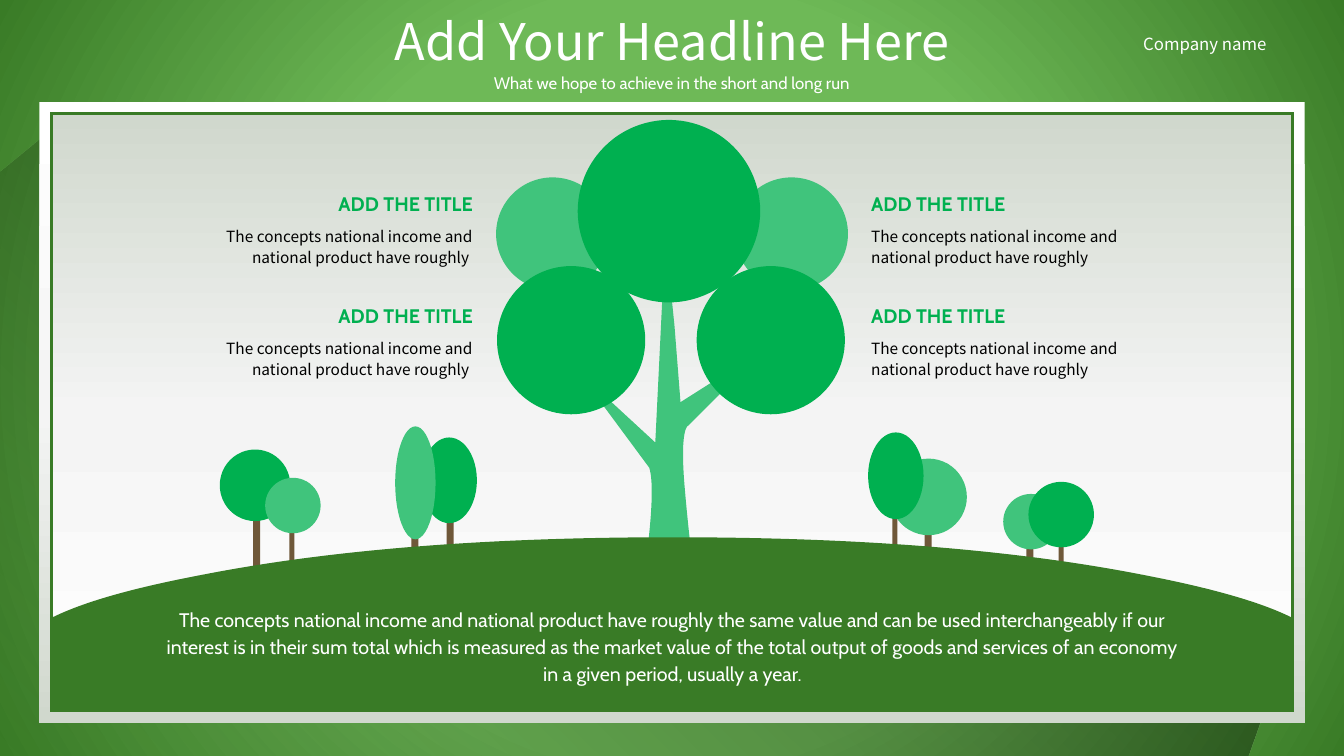
from dataclasses import dataclass

import pptx
import pptx.dml.color
import pptx.enum.shapes
import pptx.enum.text
import pptx.oxml
import pptx.oxml.ns
import pptx.util

Inches = pptx.util.Inches
SHAPE = pptx.enum.shapes.MSO_SHAPE
ALIGN = pptx.enum.text.PP_ALIGN
ANCHOR = pptx.enum.text.MSO_ANCHOR
NAMESPACE = pptx.oxml.ns.nsdecls("a")

SANS, CABIN = "Noto Sans CJK SC", "Cabin"
WHITE, BLACK, BROWN = "FFFFFF", "000000", "6F5839"
LEAF, MINT, GRASS = "00B050", "40C47C", "397B26"
PANEL_STOPS = [(0, WHITE, 100), (50, "F4F4F4", 100), (100, "D0D8CD", 100)]

Box = tuple[float, float, float, float]


@dataclass
class Tree:
    stem: Box
    crown: Box
    color: str


@dataclass
class TextStyle:
    size: float
    font: str
    color: str
    align: int = ALIGN.LEFT
    spacing: float = 1.0
    bold: bool = False


@dataclass
class Column:
    title_left: float
    detail_left: float
    align: int
    detail: str


# Drawing helpers
def rgb(color: str) -> pptx.dml.color.RGBColor:
    return pptx.dml.color.RGBColor.from_string(color)


def set_gradient(fill, owner, stops: list[tuple[int, str, int]], direction: str) -> None:
    """Stops are (position %, colour, opacity %)."""
    fill.gradient()
    gradient = owner.find(".//" + pptx.oxml.ns.qn("a:gradFill"))
    for child in list(gradient):
        gradient.remove(child)
    stop_xml = "".join(
        f'<a:gs pos="{place * 1000}"><a:srgbClr val="{color}">'
        f'<a:alpha val="{opacity * 1000}"/></a:srgbClr></a:gs>'
        for place, color, opacity in stops)
    for xml in (f"<a:gsLst {NAMESPACE}>{stop_xml}</a:gsLst>",
                direction.replace(" ", f" {NAMESPACE} ", 1)):
        gradient.append(pptx.oxml.parse_xml(xml))


def linear(degrees: int) -> str:
    return f'<a:lin ang="{degrees * 60000}" scaled="0"/>'


def finish(shape, color: str | None):
    shape.shadow.inherit = False
    shape.line.fill.background()
    if color:
        shape.fill.solid()
        shape.fill.fore_color.rgb = rgb(color)
    return shape


def add_preset(preset: int, box: Box, color: str | None = None):
    return finish(slide.shapes.add_shape(preset, *map(Inches, box)), color)


def add_panel(box: Box, degrees: int):
    panel = add_preset(SHAPE.ROUNDED_RECTANGLE, box)
    panel.adjustments[0] = 0
    set_gradient(panel.fill, panel.element, PANEL_STOPS, linear(degrees))
    return panel


def add_outline(start: tuple[float, float], segments: list[tuple], color: str | None = None):
    """A segment is an end point, or two control points and an end point."""
    builder = slide.shapes.build_freeform(*map(Inches, start))
    builder.add_line_segments([tuple(map(Inches, segment[-2:])) for segment in segments], close=True)
    shape = builder.convert_to_shape()
    lines = list(shape.element.iter(pptx.oxml.ns.qn("a:lnTo")))
    for line, segment in zip(lines, segments):
        if len(segment) == 6:
            points = "".join(
                f'<a:pt x="{Inches(x) - shape.left}" y="{Inches(y) - shape.top}"/>'
                for x, y in zip(segment[::2], segment[1::2]))
            curve = pptx.oxml.parse_xml(f"<a:cubicBezTo {NAMESPACE}>{points}</a:cubicBezTo>")
            line.getparent().replace(line, curve)
    return finish(shape, color)


def write(shape, text: str, style: TextStyle, wrap: bool, anchor: int = ANCHOR.TOP) -> None:
    frame = shape.text_frame
    frame.auto_size = pptx.enum.text.MSO_AUTO_SIZE.NONE
    frame.word_wrap = wrap
    frame.vertical_anchor = anchor
    paragraph = frame.paragraphs[0]
    paragraph.text = text
    paragraph.alignment = style.align
    paragraph.line_spacing = style.spacing
    paragraph.space_before = pptx.util.Pt(0)
    paragraph.font.size = pptx.util.Pt(style.size)
    paragraph.font.name = style.font
    paragraph.font.bold = style.bold
    paragraph.font.color.rgb = rgb(style.color)


def add_text(box: Box, text: str, style: TextStyle, wrap: bool,
             anchor: int = ANCHOR.TOP, inset: bool = False) -> None:
    shape = slide.shapes.add_textbox(*map(Inches, box))
    if not inset:
        frame = shape.text_frame
        frame.margin_left = frame.margin_right = frame.margin_top = frame.margin_bottom = 0
    write(shape, text, style, wrap, anchor)


def fill_placeholder(placeholder, box: Box, text: str, style: TextStyle) -> None:
    placeholder.left, placeholder.top, placeholder.width, placeholder.height = map(Inches, box)
    write(placeholder, text, style, wrap=False)


presentation = pptx.Presentation()
presentation.slide_width, presentation.slide_height = Inches(13.33), Inches(7.5)
slide = presentation.slides.add_slide(presentation.slide_layouts[0])

# Backdrop and framed panel
set_gradient(slide.background.fill, slide.element, [(50, "6EB957", 100), (100, GRASS, 100)],
             '<a:path path="circle"><a:fillToRect l="50000" t="50000" r="50000" b="50000"/></a:path>')
shade = add_outline((0.39, 1.38), [(12.59, 6.88), (12.37, 7.5), (0, 7.5), (0, 1.7)])
set_gradient(shade.fill, shade.element, [(0, BLACK, 50), (100, BLACK, 0)], linear(135))
add_panel((0.39, 1.01, 12.55, 6.16), 90)
inner_panel = add_panel((0.51, 1.13, 12.31, 5.92), 270)
inner_panel.line.color.rgb = rgb(GRASS)
inner_panel.line.width = pptx.util.Pt(2.25)
inner_panel.line._get_or_add_ln().append(
    pptx.oxml.parse_xml(f'<a:miter {NAMESPACE} lim="800000"/>'))

# Heading
fill_placeholder(slide.shapes.title, (3.62, 0.05, 6.09, 0.71), "Add Your Headline Here",
                 TextStyle(36, SANS, WHITE, ALIGN.CENTER))
fill_placeholder(slide.placeholders[1], (4.77, 0.65, 3.79, 0.32),
                 "What we hope to achieve in the short and long run",
                 TextStyle(12, CABIN, WHITE, ALIGN.CENTER, 1.1))
add_text((11.24, 0.29, 1.56, 0.3), "Company name", TextStyle(12, SANS, WHITE),
         wrap=False, inset=True)

# Small trees, from back to front
small_trees = [
    Tree((9.17, 4.74, 0.07, 0.69), (8.83, 4.55, 0.76, 0.76), MINT),
    Tree((8.85, 4.74, 0.05, 0.69), (8.61, 4.29, 0.55, 0.86), LEAF),
    Tree((4.43, 4.74, 0.07, 0.69), (4.18, 4.34, 0.55, 0.85), LEAF),
    Tree((4.08, 5.31, 0.07, 0.21), (3.92, 4.23, 0.4, 1.12), MINT),
    Tree((2.51, 4.98, 0.07, 0.69), (2.18, 4.46, 0.7, 0.71), LEAF),
    Tree((2.87, 5.16, 0.05, 0.47), (2.63, 4.74, 0.55, 0.55), MINT),
    Tree((10.18, 5, 0.07, 0.59), (9.95, 4.9, 0.55, 0.55), MINT),
    Tree((10.5, 5.2, 0.05, 0.47), (10.2, 4.78, 0.65, 0.65), LEAF),
]
for tree in small_trees:
    add_preset(SHAPE.RECTANGLE, tree.stem, BROWN)
    add_preset(SHAPE.OVAL, tree.crown, tree.color)

# Large tree and hill
for crown_left in (7.29, 4.92):
    add_preset(SHAPE.OVAL, (crown_left, 1.76, 1.12, 1.12), MINT)
add_outline((6.38, 5.75), [
    (6.38, 5.75, 6.52, 4.89, 6.44, 4.64), (5.73, 3.68), (6.5, 4.39), (6.6, 2.34),
    (6.69, 3.23), (6.75, 3.99), (7.6, 3.45), (6.83, 4.22),
    (6.83, 4.22, 6.74, 4.22, 6.79, 4.82), (6.84, 5.41, 6.89, 5.73, 6.89, 5.73)], MINT)
add_outline((0.51, 7.03), [
    (0.51, 6.13), (0.83, 5.97, 1.33, 5.83, 2.02, 5.7), (3.3, 5.45, 4.85, 5.33, 6.67, 5.33),
    (8.49, 5.33, 10.04, 5.45, 11.32, 5.7), (12, 5.83, 12.5, 5.97, 12.82, 6.13),
    (12.82, 7.04), (12.79, 7.05), (0.55, 7.05)], GRASS)
add_text((1.56, 6, 10.22, 0.79),
         "The concepts national income and national product have roughly the same value and can be "
         "used interchangeably if our interest is in their sum total which is measured as the market "
         "value of the total output of goods and services of an economy in a given period, usually a year.",
         TextStyle(14, CABIN, WHITE, ALIGN.CENTER, 1.14), wrap=True)
for left, top, diameter in ((5.73, 1.19, 1.81), (6.91, 2.64, 1.47), (4.93, 2.64, 1.47)):
    add_preset(SHAPE.OVAL, (left, top, diameter, diameter), LEAF)

# Four concepts beside the crowns
concept = "The concepts national income and national product have roughly"
for column in (Column(8.64, 8.64, ALIGN.LEFT, concept),
               Column(3.33, 1.84, ALIGN.RIGHT, concept + " ")):
    for top in (1.91, 3.02):
        add_text((column.title_left, top, 1.36, 0.22), "ADD THE TITLE",
                 TextStyle(14, CABIN, LEAF, column.align, bold=True), False, ANCHOR.MIDDLE)
        add_text((column.detail_left, top + 0.34, 2.85, 0.37), column.detail,
                 TextStyle(11, SANS, BLACK, column.align, 1.14), True, ANCHOR.MIDDLE)

presentation.save("out.pptx")
